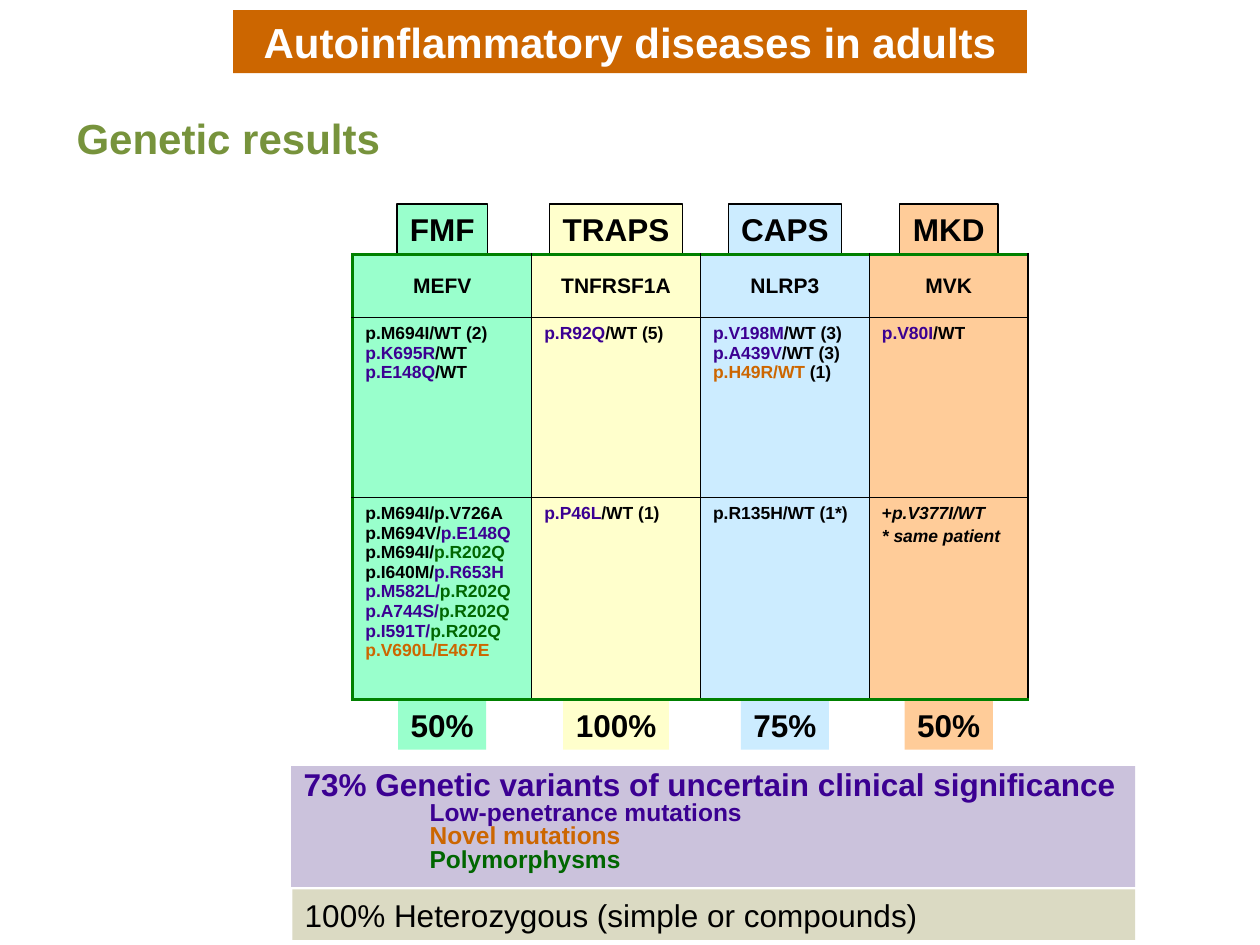
from dataclasses import dataclass

from lxml.etree import SubElement
from pptx import Presentation
from pptx.dml.color import RGBColor
from pptx.enum.shapes import MSO_SHAPE as Shape
from pptx.enum.text import MSO_ANCHOR as Anchor, MSO_AUTO_SIZE as AutoSize, PP_ALIGN as Align
from pptx.oxml.ns import qn
from pptx.util import Inches, Pt


@dataclass(frozen=True)
class Theme:
    font: str = "Arial"
    ink: str = "000000"
    white: str = "FFFFFF"
    low: str = "3B0092"
    novel: str = "CC6600"
    poly: str = "006600"
    heading: str = "77933C"
    frame: str = "008000"
    legend: str = "CBC2DC"
    summary: str = "DBDAC3"
    title_size: float = 24
    label_size: float = 18
    legend_size: float = 14
    gene_size: float = 12
    variant_size: float = 10
    thin: float = 0.75
    thick: float = 2


THEME = Theme()
COLUMNS, ROWS = 100, 75


@dataclass
class Run:
    text: str
    color: str = THEME.ink
    italic: bool = False


def low(text):
    return Run(text, THEME.low)


def novel(text):
    return Run(text, THEME.novel)


def poly(text):
    return Run(text, THEME.poly)


@dataclass
class Disease:
    name: str
    gene: str
    share: str
    fill: str
    width: float
    tab_width: float
    share_width: float
    simple: list
    compound: list
    space_before: float = 0


class SlideBuilder:
    """Places elements on a slide by grid columns and rows."""

    def __init__(self, deck, theme):
        self.theme = theme
        self.slide = deck.slides.add_slide(deck.slide_layouts[1])
        self.column = deck.slide_width / COLUMNS
        self.row = deck.slide_height / ROWS

    def box(self, left, top, width, height):
        return (round(left * self.column), round(top * self.row),
                round(width * self.column), round(height * self.row))

    def add_lines(self, frame, lines, size, bold=True, align=Align.LEFT, before=0, spacing=None):
        for number, line in enumerate(lines):
            paragraph = frame.paragraphs[0] if number == 0 else frame.add_paragraph()
            paragraph.alignment = align
            paragraph.space_before = Pt(before)
            if spacing:
                paragraph.line_spacing = spacing
            for part in line:
                run = paragraph.add_run()
                run.text = part.text
                run.font.name = self.theme.font
                run.font.size = Pt(size)
                run.font.bold = bold
                run.font.italic = part.italic
                run.font.color.rgb = RGBColor.from_string(part.color)

    def paint(self, shape, fill):
        shape.fill.solid()
        shape.fill.fore_color.rgb = RGBColor.from_string(fill)

    def place(self, placeholder, area, fill, anchor):
        placeholder.left, placeholder.top, placeholder.width, placeholder.height = self.box(*area)
        self.paint(placeholder, fill)
        placeholder.text_frame.auto_size = AutoSize.NONE
        placeholder.text_frame.vertical_anchor = anchor
        return placeholder.text_frame

    def title(self, text, area, fill):
        frame = self.place(self.slide.shapes.title, area, fill, Anchor.MIDDLE)
        self.add_lines(frame, [[Run(text, self.theme.white)]], self.theme.title_size,
                       align=Align.CENTER)

    def legend(self, lead, entries, area, fill, indent):
        frame = self.place(self.slide.placeholders[1], area, fill, Anchor.TOP)
        self.add_lines(frame, [[lead]] + [[entry] for entry in entries],
                       self.theme.legend_size, spacing=0.8)
        frame.paragraphs[0].runs[0].font.size = Pt(self.theme.label_size)
        for number, paragraph in enumerate(frame.paragraphs):
            properties = paragraph._p.get_or_add_pPr()
            properties.set("marL", str(round(indent * self.column) if number else 0))
            properties.set("indent", "0")
            SubElement(properties, qn("a:buNone"))

    def heading(self, text, area):
        frame = self.slide.shapes.add_textbox(*self.box(*area)).text_frame
        frame.word_wrap = True
        self.add_lines(frame, [[Run(text, self.theme.heading)]], self.theme.title_size)

    def label(self, text, area, fill, outlined=False, bold=True, align=Align.CENTER):
        shape = self.slide.shapes.add_shape(Shape.RECTANGLE, *self.box(*area))
        shape.shadow.inherit = False
        self.paint(shape, fill)
        if outlined:
            shape.line.color.rgb = RGBColor.from_string(self.theme.ink)
            shape.line.width = Pt(self.theme.thin)
        else:
            shape.line.fill.background()
        shape.text_frame.word_wrap = align == Align.LEFT
        self.add_lines(shape.text_frame, [[Run(text)]], self.theme.label_size, bold, align)

    def borders(self, cell, framed):
        """Draw thick green lines on the framed sides and thin black ones elsewhere."""
        for side in "LRTB":
            color, width = ((self.theme.frame, self.theme.thick) if side in framed
                            else (self.theme.ink, self.theme.thin))
            line = SubElement(cell._tc.get_or_add_tcPr(), qn(f"a:ln{side}"), w=str(Pt(width)))
            SubElement(SubElement(line, qn("a:solidFill")), qn("a:srgbClr"), val=color)

    def variant_table(self, diseases, area, heights):
        table = self.slide.shapes.add_table(
            len(heights), len(diseases), *self.box(*area)).table
        table.first_row = table.horz_banding = False
        for row, height in zip(table.rows, heights):
            row.height = round(height * self.row)
        for x, disease in enumerate(diseases):
            table.columns[x].width = round(disease.width * self.column)
            contents = [[[Run(disease.gene)]], disease.simple, disease.compound]
            for y, lines in enumerate(contents):
                cell = table.cell(y, x)
                self.borders(cell, ("L" if x == 0 else "") + ("T", "", "B")[y])
                self.paint(cell, disease.fill)
                if y == 0:
                    cell.vertical_anchor = Anchor.MIDDLE
                    self.add_lines(cell.text_frame, lines, self.theme.gene_size,
                                   align=Align.CENTER)
                else:
                    self.add_lines(cell.text_frame, lines, self.theme.variant_size,
                                   before=disease.space_before if y == 2 else 0)


DISEASES = [
    Disease("FMF", "MEFV", "50%", "99FFCC", 14.2, 7.2, 7,
            [[Run("p.M694I/WT (2)")],
             [low("p.K695R"), Run("/WT")],
             [low("p.E148Q"), Run("/WT")]],
            [[Run("p.M694I/p.V726A")],
             [Run("p.M694V/"), low("p.E148Q")],
             [Run("p.M694I/"), poly("p.R202Q")],
             [Run("p.I640M/"), low("p.R653H")],
             [low("p.M582L/"), poly("p.R202Q")],
             [low("p.A744S/"), poly("p.R202Q")],
             [low("p.I591T/"), poly("p.R202Q")],
             [novel("p.V690L/E467E")]]),
    Disease("TRAPS", "TNFRSF1A", "100%", "FFFFCC", 13.4, 10.6, 8.4,
            [[low("p.R92Q"), Run("/WT (5)")]],
            [[low("p.P46L"), Run("/WT (1)")]]),
    Disease("CAPS", "NLRP3", "75%", "CCECFF", 13.4, 9, 7,
            [[low("p.V198M"), Run("/WT (3) "), low("p.A439V"), Run("/WT (3)")],
             [novel("p.H49R/WT "), Run("(1)")]],
            [[Run("p.R135H/WT (1*)")]]),
    Disease("MKD", "MVK", "50%", "FFCC99", 12.6, 7.8, 7,
            [[low("p.V80I"), Run("/WT")]],
            [[Run("+"), Run("p.V377I/WT", italic=True)],
             [Run("* same patient", italic=True)]], space_before=2),
]


def main():
    deck = Presentation()
    deck.slide_width, deck.slide_height = Inches(10), Inches(7.5)
    page = SlideBuilder(deck, THEME)

    page.title("Autoinflammatory diseases in adults", (18.5, 0.8, 63, 5), THEME.novel)
    page.heading("Genetic results", (5.1, 8.4, 27.6, 5))

    table_left, table_top, label_height = 28, 20.2, 4
    heights = [5, 14.3, 16]
    table_width = sum(disease.width for disease in DISEASES)
    left = table_left
    for disease in DISEASES:
        center = left + disease.width / 2
        page.label(disease.name, (center - disease.tab_width / 2, table_top - label_height,
                                  disease.tab_width, label_height), disease.fill, outlined=True)
        page.label(disease.share, (center - disease.share_width / 2, table_top + sum(heights),
                                   disease.share_width, label_height), disease.fill)
        left += disease.width
    page.variant_table(DISEASES, (table_left, table_top, table_width, sum(heights)), heights)

    page.legend(low("73% Genetic variants of uncertain clinical significance"),
                [low("Low-penetrance mutations"), novel("Novel mutations"),
                 poly("Polymorphysms")],
                (23.1, 60.8, 67, 9.6), THEME.legend, indent=10)
    page.label("100% Heterozygous (simple or compounds)", (23.2, 70.6, 66.9, 4),
               THEME.summary, bold=False, align=Align.LEFT)
    deck.save("out.pptx")


if __name__ == "__main__":
    main()
